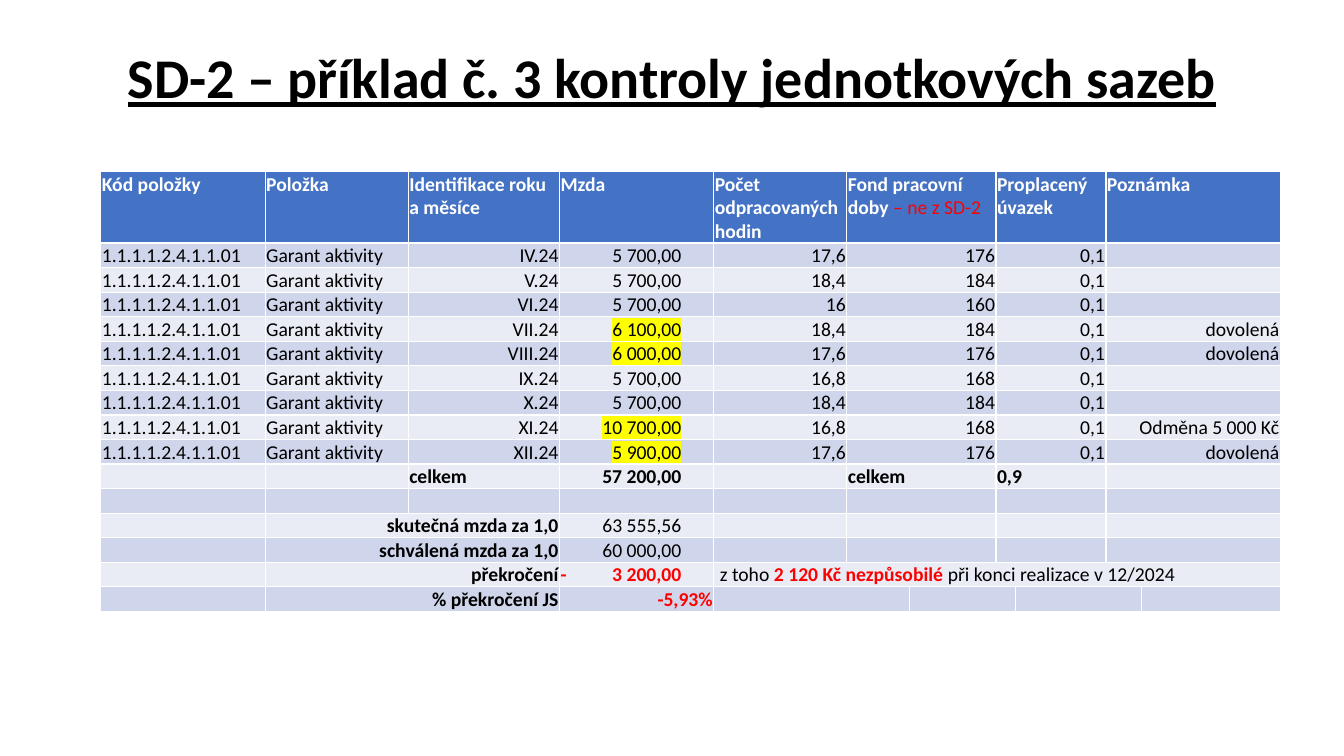
from lxml import etree
from pptx import Presentation
from pptx.dml.color import RGBColor
from pptx.enum.text import MSO_ANCHOR as Anchor, PP_ALIGN as Align
from pptx.oxml.ns import qn
from pptx.util import Inches, Pt

BLACK = RGBColor(0x00, 0x00, 0x00)
WHITE = RGBColor(0xFF, 0xFF, 0xFF)
RED = RGBColor(0xFF, 0x00, 0x00)
YELLOW = RGBColor(0xFF, 0xFF, 0x00)
HEADER_BLUE = RGBColor(0x44, 0x72, 0xC4)
BANDS = (RGBColor(0xCF, 0xD5, 0xEA), RGBColor(0xE9, 0xEB, 0xF5))

COLUMN_WIDTHS = (1.63, 1.42, 1.5, 1.53, 1.32, 0.62, 0.86, 0.19, 0.9, 0.35, 1.38)
MONTH_SPANS = (1, 1, 1, 1, 1, 2, 2, 2)
SUMMARY_SPANS = (1, 2, 1, 1, 2, 2, 2)
EXCESS_SPANS = (1, 2, 1, 7)
PERCENT_SPANS = (1, 2, 1, 2, 2, 2, 1)

HEADINGS = ("Kód položky", "Položka", "Identifikace roku a měsíce", "Mzda",
            "Počet odpracovaných hodin", "Fond pracovní doby ",
            "Proplacený úvazek", "Poznámka")
BASE_WAGE = "5 700,00"
MONTHS = (
    ("IV.24", BASE_WAGE, "17,6", "176", ""),
    ("V.24", BASE_WAGE, "18,4", "184", ""),
    ("VI.24", BASE_WAGE, "16", "160", ""),
    ("VII.24", "6 100,00", "18,4", "184", "dovolená"),
    ("VIII.24", "6 000,00", "17,6", "176", "dovolená"),
    ("IX.24", BASE_WAGE, "16,8", "168", ""),
    ("X.24", BASE_WAGE, "18,4", "184", ""),
    ("XI.24", "10 700,00", "16,8", "168", "Odměna 5 000 Kč"),
    ("XII.24", "5 900,00", "17,6", "176", "dovolená"),
)


def add_text(paragraph, text, size=14, color=BLACK, bold=False, underline=False,
             highlight=None, align=Align.LEFT):
    paragraph.alignment = align
    run = paragraph.add_run()
    run.text = text
    font = run.font
    font.name, font.size = "Calibri", Pt(size)
    font.bold, font.underline = bold, underline
    font.color.rgb = color
    if highlight is not None:
        mark = etree.Element(qn("a:highlight"))
        etree.SubElement(mark, qn("a:srgbClr"), val=str(highlight))
        run._r.rPr.find(qn("a:solidFill")).addnext(mark)


def add_wage(cell, text, **text_format):
    paragraph = cell.text_frame.paragraphs[0]
    add_text(paragraph, text, **text_format)
    stops = etree.SubElement(paragraph._p.get_or_add_pPr(), qn("a:tabLst"))
    etree.SubElement(stops, qn("a:tab"), pos=str(Inches(1.2)), algn="r")


def fill_cell(cell, text, **text_format):
    paragraph = cell.text_frame.paragraphs[0]
    if text:
        add_text(paragraph, text, **text_format)
    else:
        etree.SubElement(paragraph._p, qn("a:endParaRPr"), sz="1400")


def lay_out_row(table, index, spans):
    fill_color = BANDS[(index - 1) % 2] if index else HEADER_BLUE
    for cell in table.rows[index].cells:
        cell.fill.solid()
        cell.fill.fore_color.rgb = fill_color
        cell.margin_left = cell.margin_right = cell.margin_top = Inches(0.01)
        cell.margin_bottom = 0
        cell.vertical_anchor = Anchor.BOTTOM if index else Anchor.TOP
    cells, column = [], 0
    for span in spans:
        cell = table.cell(index, column)
        if span > 1:
            cell.merge(table.cell(index, column + span - 1))
        cells.append(cell)
        column += span
    return cells


def fill_header(table):
    cells = lay_out_row(table, 0, MONTH_SPANS)
    for cell, heading in zip(cells, HEADINGS):
        fill_cell(cell, heading, color=WHITE, bold=True)
    fill_cell(cells[5], "– ne z SD-2", color=RED)


def fill_months(table):
    for index, (month, wage, hours, fund, note) in enumerate(MONTHS, 1):
        code, item, period, pay, *figures = lay_out_row(table, index, MONTH_SPANS)
        fill_cell(code, "1.1.1.1.2.4.1.1.01")
        fill_cell(item, "Garant aktivity")
        fill_cell(period, month, align=Align.RIGHT)
        add_wage(pay, "\t" + wage, highlight=None if wage == BASE_WAGE else YELLOW)
        for cell, value in zip(figures, (hours, fund, "0,1", note)):
            fill_cell(cell, value, align=Align.RIGHT)


def fill_totals(table):
    totals = ("", "", "celkem", "\t57 200,00", "", "celkem", "0,9", "")
    for column, (cell, text) in enumerate(zip(lay_out_row(table, 10, MONTH_SPANS), totals)):
        write = add_wage if column == 3 else fill_cell
        write(cell, text, bold=True)
    for cell in lay_out_row(table, 11, MONTH_SPANS):
        fill_cell(cell, "")


def fill_summary(table):
    summary = (
        (SUMMARY_SPANS, "skutečná mzda za 1,0", "\t63 555,56", {}),
        (SUMMARY_SPANS, "schválená mzda za 1,0", "\t60 000,00", {}),
        (EXCESS_SPANS, "překročení", "-\t3 200,00", {"color": RED, "bold": True}),
        (PERCENT_SPANS, "% překročení JS", "-5,93%",
         {"color": RED, "bold": True, "align": Align.RIGHT}),
    )
    for index, (spans, label, amount, amount_format) in enumerate(summary, 12):
        blank, title, value, *rest = lay_out_row(table, index, spans)
        fill_cell(title, label, bold=True, align=Align.RIGHT)
        write = add_wage if "\t" in amount else fill_cell
        write(value, amount, **amount_format)
        if spans == EXCESS_SPANS:
            fill_excess_note(rest.pop())
        for cell in (blank, *rest):
            fill_cell(cell, "")


def fill_excess_note(cell):
    cell.margin_left = Inches(0.06)
    fill_cell(cell, "z toho ")
    fill_cell(cell, "2 120 Kč nezpůsobilé ", color=RED, bold=True)
    fill_cell(cell, "při konci realizace v 12/2024")


def add_title(slide):
    frame = slide.shapes.add_textbox(
        Inches(1.1), Inches(0.19), Inches(11.13), Inches(1.22)).text_frame
    frame.word_wrap = True
    frame.vertical_anchor = Anchor.MIDDLE
    heading = frame.paragraphs[0]
    heading.line_spacing = 0.9
    add_text(heading, "SD-2 – příklad č. 3 kontroly jednotkových sazeb",
             size=40, bold=True, underline=True, align=Align.CENTER)


def add_wage_table(slide):
    table = slide.shapes.add_table(
        16, len(COLUMN_WIDTHS), Inches(1), Inches(1.7),
        Inches(sum(COLUMN_WIDTHS)), Inches(4.37)).table
    for column, width in zip(table.columns, COLUMN_WIDTHS):
        column.width = Inches(width)
    for index, row in enumerate(table.rows):
        row.height = Inches(0.24 if index else 0.71)
    fill_header(table)
    fill_months(table)
    fill_totals(table)
    fill_summary(table)


def main():
    deck = Presentation()
    deck.slide_width, deck.slide_height = Inches(13.33), Inches(7.5)
    slide = deck.slides.add_slide(deck.slide_layouts[6])
    add_title(slide)
    add_wage_table(slide)
    deck.save("out.pptx")


if __name__ == "__main__":
    main()
